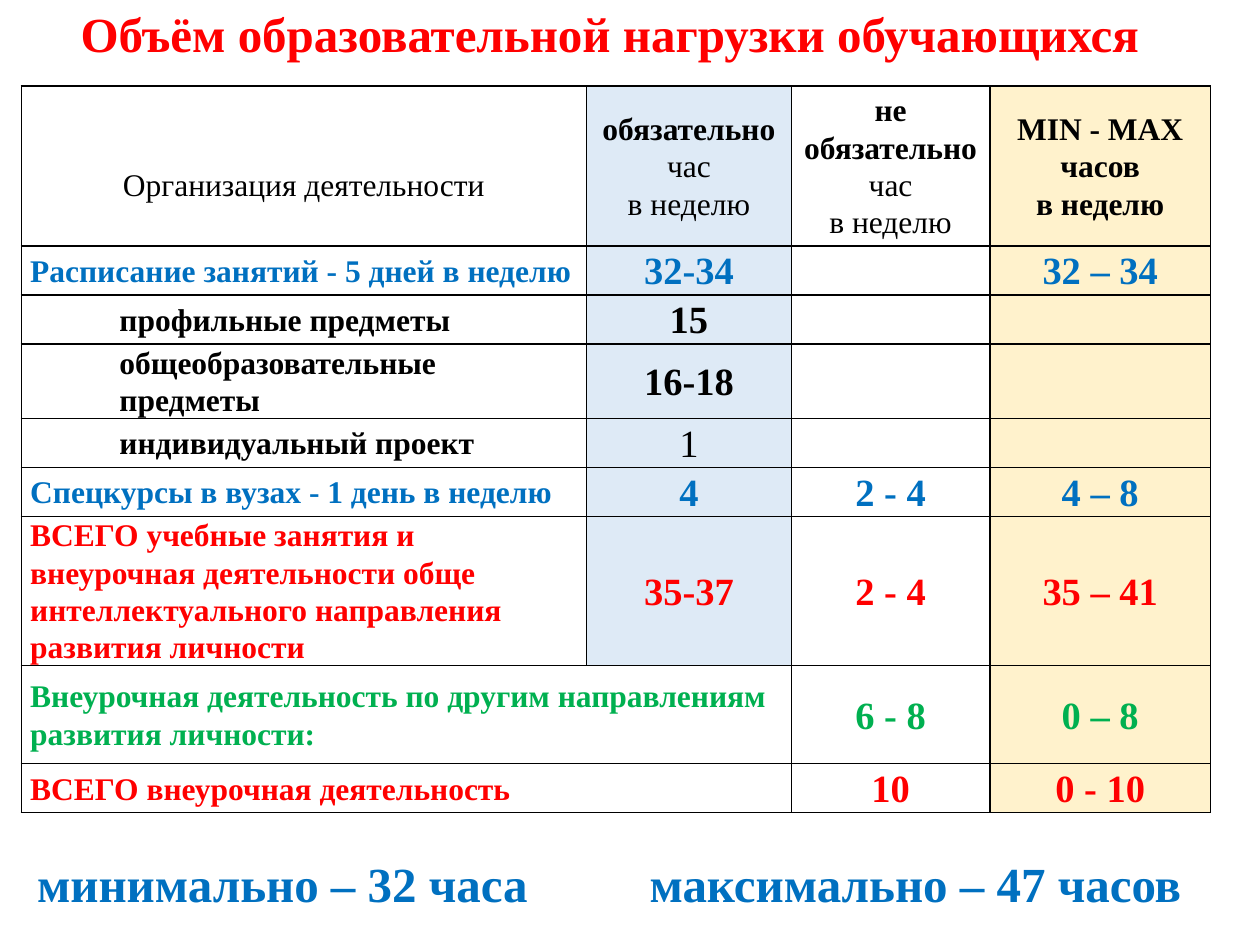
from lxml import etree
from pptx import Presentation
from pptx.dml.color import RGBColor
from pptx.enum.shapes import MSO_SHAPE
from pptx.enum.text import MSO_ANCHOR, PP_ALIGN
from pptx.oxml.ns import qn
from pptx.util import Pt

CENTER, LEFT = PP_ALIGN.CENTER, PP_ALIGN.LEFT
MIDDLE = MSO_ANCHOR.MIDDLE
RECTANGLE = MSO_SHAPE.RECTANGLE

FONT = "Times New Roman"
BLACK, WHITE, RED, BLUE, GREEN = "000000", "FFFFFF", "FF0000", "0070C0", "00B050"
COLUMN_FILLS = [None, "DEEAF6", None, "FFF2CC"]
COLUMN_WIDTHS = [323, 117, 113.5, 126]
ROW_HEIGHTS = [91.5, 28, 28, 28, 28, 28, 84, 56, 28]
LABEL_SIZE, VALUE_SIZE, BANNER_SIZE = 18, 22, 28
LEFT_EDGE, BANNER_WIDTH, BANNER_HEIGHT = 12.2, 672.5, 38
CELL_MARGIN, SUBJECT_INDENT = 5.1, 51
LINE_SPACING = 1.07

# Each header is a list of (line, bold)
HEADERS = [
    [("Организация деятельности", False)],
    [("обязательно", True), ("час", False), ("в неделю", False)],
    [("не", True), ("обязательно", True), ("час", False), ("в неделю", False)],
    [("МIN - МАХ", True), ("часов", True), ("в неделю", True)],
]

# Label, colour, indent, then the values of the three hour columns
ROWS = [
    ("Расписание занятий - 5 дней в неделю", BLUE, 0, ["32-34", "", "32 – 34"]),
    ("профильные предметы", BLACK, SUBJECT_INDENT, ["15", "", ""]),
    ("общеобразовательные предметы", BLACK, SUBJECT_INDENT, ["16-18", "", ""]),
    ("индивидуальный проект", BLACK, SUBJECT_INDENT, ["1", "", ""]),
    ("Спецкурсы в вузах - 1 день в неделю", BLUE, 0, ["4", "2 - 4", "4 – 8"]),
    ("ВСЕГО учебные занятия и внеурочная деятельности обще "
     "интеллектуального направления развития личности",
     RED, 0, ["35-37", "2 - 4", "35 – 41"]),
    ("Внеурочная деятельность по другим направлениям развития личности:",
     GREEN, 0, ["", "6 - 8", "0 – 8"]),
    ("ВСЕГО внеурочная деятельность", RED, 0, ["", "10", "0 - 10"]),
]
MERGED_ROWS = [7, 8]


def color(value):
    return RGBColor.from_string(value)


def add_run(paragraph, text, size, text_color, bold=True):
    run = paragraph.add_run()
    run.text = text
    run.font.name = FONT
    run.font.size = Pt(size)
    run.font.bold = bold
    run.font.color.rgb = color(text_color)


def add_banner(slide, top, text, text_color, alignment=CENTER, tab_stop=None):
    shape = slide.shapes.add_shape(
        RECTANGLE, Pt(LEFT_EDGE), Pt(top), Pt(BANNER_WIDTH), Pt(BANNER_HEIGHT))
    shape.shadow.inherit = False
    shape.fill.solid()
    shape.fill.fore_color.rgb = color(WHITE)
    shape.line.fill.background()
    frame = shape.text_frame
    frame.word_wrap = True
    frame.vertical_anchor = MIDDLE
    frame.margin_left = frame.margin_right = Pt(9)
    paragraph = frame.paragraphs[0]
    paragraph.alignment = alignment
    if tab_stop:
        properties = paragraph._p.get_or_add_pPr()
        tabs = etree.SubElement(properties, qn("a:tabLst"))
        etree.SubElement(tabs, qn("a:tab"), pos=str(Pt(tab_stop)), algn="l")
    add_run(paragraph, text, BANNER_SIZE, text_color)


def style_cell(cell, fill):
    cell.margin_left = cell.margin_right = Pt(CELL_MARGIN)
    cell.margin_top = cell.margin_bottom = 0
    cell.vertical_anchor = MIDDLE
    # Borders come before the fill in the cell properties
    properties = cell._tc.get_or_add_tcPr()
    for side in ("lnL", "lnR", "lnT", "lnB"):
        line = etree.SubElement(properties, qn(f"a:{side}"), w=str(Pt(1)))
        line_fill = etree.SubElement(line, qn("a:solidFill"))
        etree.SubElement(line_fill, qn("a:srgbClr"), val=BLACK)
    if fill:
        cell.fill.solid()
        cell.fill.fore_color.rgb = color(fill)
    else:
        cell.fill.background()


def write_cell(cell, lines, size, text_color, alignment=CENTER, indent=0):
    """Write (text, bold) lines as paragraphs."""
    frame = cell.text_frame
    for index, (text, bold) in enumerate(lines):
        paragraph = frame.add_paragraph() if index else frame.paragraphs[0]
        paragraph.alignment = alignment
        paragraph.line_spacing = LINE_SPACING
        if indent:
            properties = paragraph._p.get_or_add_pPr()
            properties.set("marL", str(Pt(indent)))
            properties.set("indent", "0")
        add_run(paragraph, text, size, text_color, bold)


def add_hours_table(slide):
    table = slide.shapes.add_table(
        len(ROW_HEIGHTS), len(COLUMN_WIDTHS), Pt(LEFT_EDGE), Pt(49),
        Pt(sum(COLUMN_WIDTHS)), Pt(sum(ROW_HEIGHTS))).table
    for column, width in zip(table.columns, COLUMN_WIDTHS):
        column.width = Pt(width)
    for row, height in zip(table.rows, ROW_HEIGHTS):
        row.height = Pt(height)
        for cell, fill in zip(row.cells, COLUMN_FILLS):
            style_cell(cell, fill)

    # Header row; the first heading sits below the middle
    for index, lines in enumerate(HEADERS):
        write_cell(table.cell(0, index), lines, LABEL_SIZE, BLACK)
    table.cell(0, 0).margin_top = Pt(22)

    # Activity rows
    for row_index, (label, text_color, indent, values) in enumerate(ROWS, 1):
        write_cell(table.cell(row_index, 0), [(label, True)],
                   LABEL_SIZE, text_color, LEFT, indent)
        for column_index, value in enumerate(values, 1):
            if value:
                write_cell(table.cell(row_index, column_index),
                           [(value, value != "1")], VALUE_SIZE, text_color)
    for row_index in MERGED_ROWS:
        table.cell(row_index, 0).merge(table.cell(row_index, 1))


def main():
    presentation = Presentation()
    presentation.slide_width, presentation.slide_height = Pt(720), Pt(540)
    slide = presentation.slides.add_slide(presentation.slide_layouts[6])

    # Title, table of hours, weekly totals
    add_banner(slide, 0, "Объём образовательной нагрузки обучающихся", RED)
    add_hours_table(slide)
    add_banner(slide, 485.5, "минимально – 32 часа\tмаксимально – 47 часов",
               BLUE, LEFT, tab_stop=350)

    presentation.save("out.pptx")


if __name__ == "__main__":
    main()
